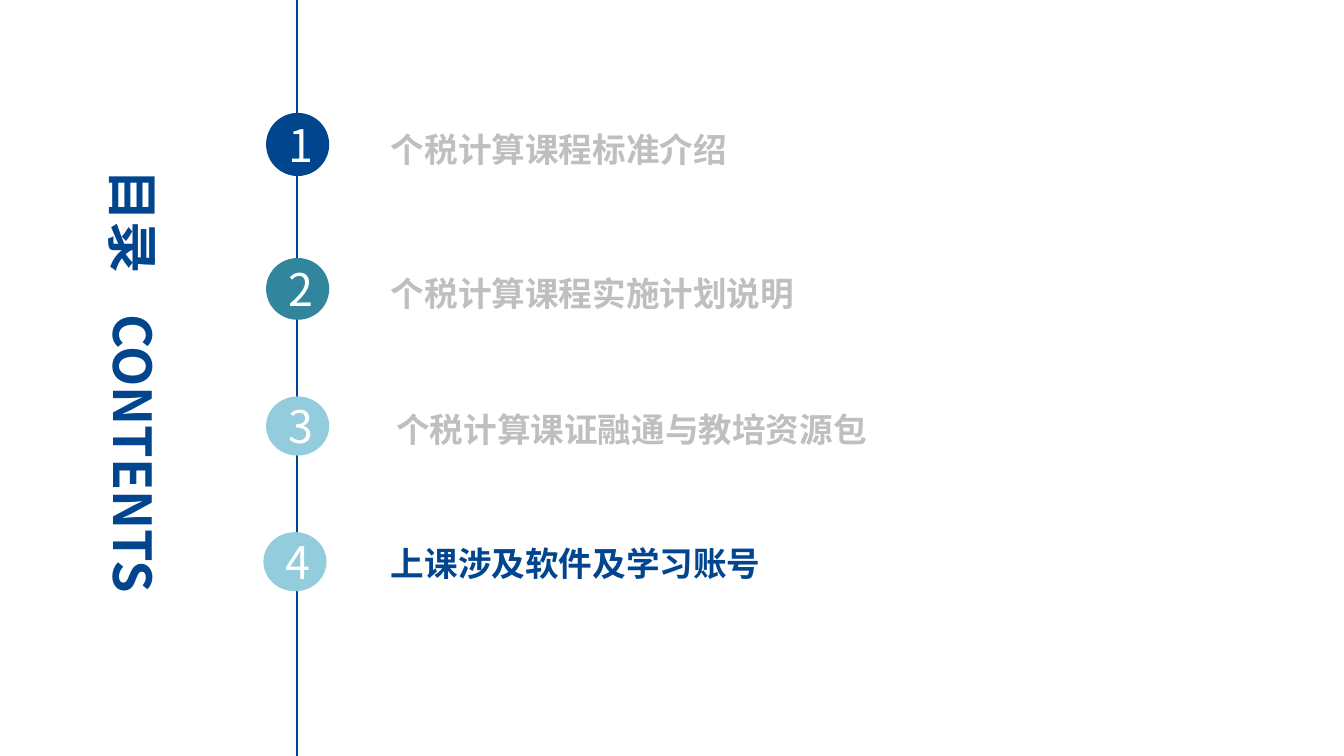
from lxml.etree import SubElement
from pptx import Presentation
from pptx.dml.color import RGBColor
from pptx.enum.shapes import MSO_CONNECTOR, MSO_SHAPE
from pptx.enum.text import MSO_ANCHOR, MSO_AUTO_SIZE, PP_ALIGN
from pptx.oxml.ns import qn
from pptx.util import Inches, Pt

COLORS = {"navy": "01458E", "teal": "31859C", "sky": "93CDDD",
          "gray": "BFBFBF", "white": "FFFFFF"}
HEAD_FONT = "Noto Sans CJK SC"


def rgb(name):
    return RGBColor.from_string(COLORS[name])


def write(s, text, size, font, color, bold, align=PP_ALIGN.LEFT, anchor=MSO_ANCHOR.TOP):
    """Put one formatted line of text into a shape."""
    tf = s.text_frame
    tf.text = text
    tf.vertical_anchor = anchor
    p = tf.paragraphs[0]
    p.alignment = align
    f = p.runs[0].font
    f.size, f.name, f.bold = Pt(size), font, bold
    f.color.rgb = rgb(color)


prs = Presentation()
prs.slide_width = Inches(10)
prs.slide_height = Inches(10) * 9 // 16
slide = prs.slides.add_slide(prs.slide_layouts[5])

# Vertical heading
title = slide.shapes.title
title.left, title.top = Inches(0.5), Inches(1.37)
title.width, title.height = Inches(0.99), Inches(0.57)
subtitle = slide.shapes.add_textbox(Inches(-0.13), Inches(3.08), Inches(2.25), Inches(0.57))
for s, text in ((title, "目录"), (subtitle, "CONTENTS")):
    write(s, text, 28, HEAD_FONT, "navy", True)
    s.text_frame.auto_size = MSO_AUTO_SIZE.NONE
    s.text_frame.word_wrap = False
    s.rotation = 90

# Timeline
line = slide.shapes.add_connector(
    MSO_CONNECTOR.STRAIGHT, Inches(2.21), 0, Inches(2.21), prs.slide_height)
line.line.color.rgb = rgb("navy")
line.line.width = Pt(1.25)
SubElement(line._element.spPr, qn("a:effectLst"))

# Agenda: dot left, top, height, fill; label left, top, width, colour, text
items = [
    (1.98, 0.84, 0.47, "navy", 2.81, 0.91, 5.24, "gray", "个税计算课程标准介绍"),
    (1.98, 1.92, 0.46, "teal", 2.81, 1.98, 6.63, "gray", "个税计算课程实施计划说明"),
    (1.98, 2.95, 0.44, "sky", 2.85, 2.99, 6.58, "gray", "个税计算课证融通与教培资源包"),
    (1.96, 3.96, 0.44, "sky", 2.81, 3.99, 6.58, "navy", "上课涉及软件及学习账号"),
]
for number, (x, y, h, fill, label_x, label_y, label_w, color, text) in enumerate(items, 1):
    dot = slide.shapes.add_shape(
        MSO_SHAPE.OVAL, Inches(x), Inches(y), Inches(0.47), Inches(h))
    dot.shadow.inherit = False
    dot.fill.solid()
    dot.fill.fore_color.rgb = rgb(fill)
    dot.line.fill.background()
    write(dot, str(number), 24, HEAD_FONT, "white", False,
          PP_ALIGN.CENTER, MSO_ANCHOR.MIDDLE)

    label = slide.shapes.add_textbox(
        Inches(label_x), Inches(label_y), Inches(label_w), Inches(0.4))
    label.text_frame.word_wrap = True
    write(label, text, 18, "Calibri", color, True)

prs.save("out.pptx")
